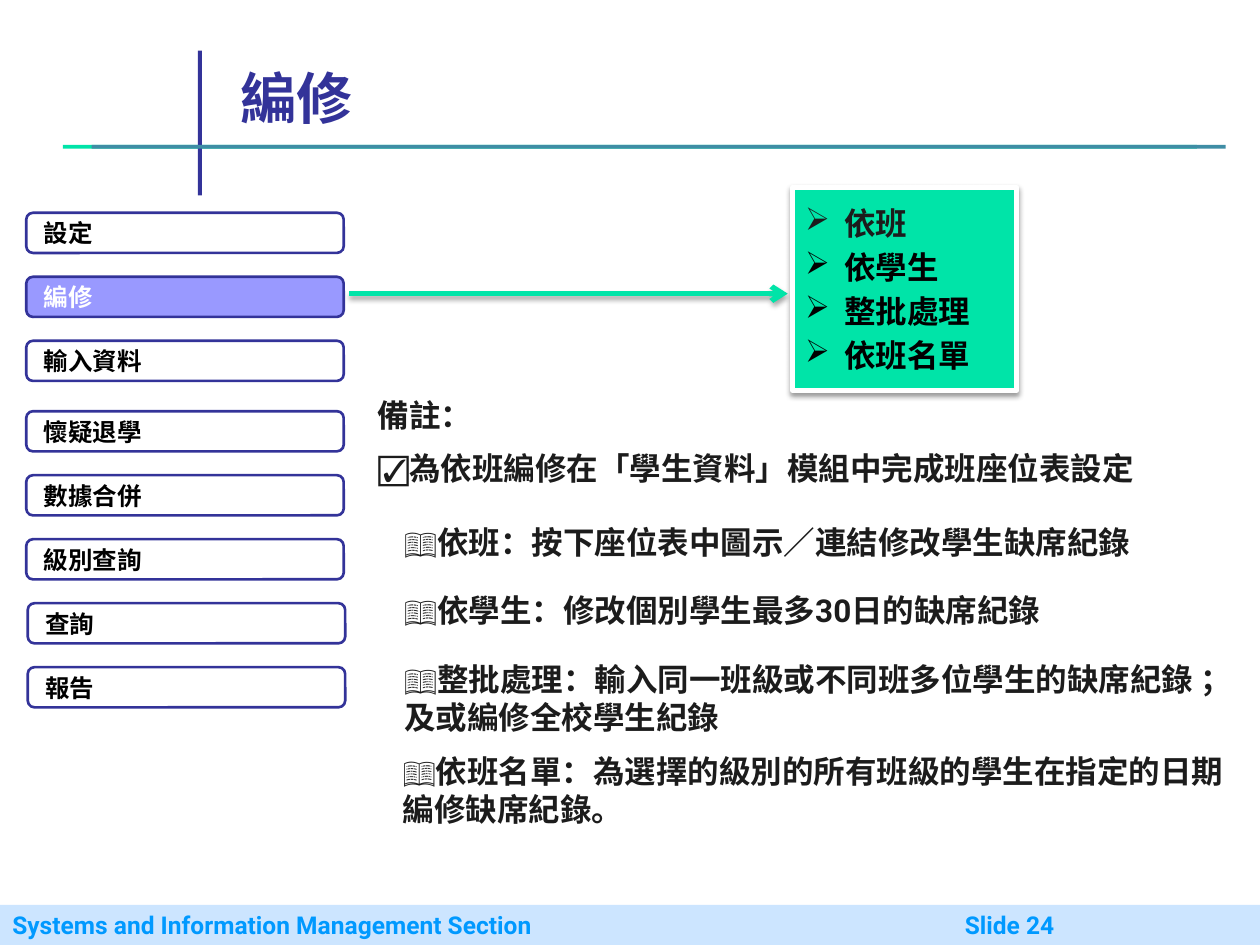
from lxml import etree
from pptx import Presentation
from pptx.dml.color import RGBColor
from pptx.enum.shapes import MSO_CONNECTOR, MSO_SHAPE
from pptx.enum.text import MSO_ANCHOR, MSO_AUTO_SIZE, PP_ALIGN
from pptx.oxml.ns import qn
from pptx.util import Cm, Pt

RECT, ROUNDED = MSO_SHAPE.RECTANGLE, MSO_SHAPE.ROUNDED_RECTANGLE
STRAIGHT = MSO_CONNECTOR.STRAIGHT
TOP, MIDDLE, BOTTOM = MSO_ANCHOR.TOP, MSO_ANCHOR.MIDDLE, MSO_ANCHOR.BOTTOM
LEFT = PP_ALIGN.LEFT
NO_AUTOFIT = MSO_AUTO_SIZE.NONE

COLORS = {
    "navy": "333399", "mint": "00E4A8", "teal": "3F8DA5", "lilac": "9999FF",
    "footer": "CCE5FF", "footer_text": "0099FF", "ink": "1C1C1C",
    "black": "000000", "white": "FFFFFF",
}
CJK, LATIN, TITLE_FONT = "Noto Sans CJK TC", "Roboto", "Arial"

MENU = ["設定", "編修", "輸入資料", "懷疑退學", "數據合併", "級別查詢", "查詢", "報告"]
CURRENT = "編修"
MODES = ["依班", "依學生", "整批處理", "依班名單"]
# left, top, height in cm, then the paragraphs
NOTES = [
    (7.37, 7.85, 2.18, ["備註：", "☑為依班編修在「學生資料」模組中完成班座位表設定"]),
    (7.9, 10.41, 1.02, ["📖依班：按下座位表中圖示／連結修改學生缺席紀錄"]),
    (7.9, 11.79, 1.02, ["📖依學生：修改個別學生最多30日的缺席紀錄"]),
    (7.9, 13.18, 1.8,
     ["📖整批處理：輸入同一班級或不同班多位學生的缺席紀錄 ；及或編修全校學生紀錄"]),
    (7.87, 15.04, 1.8,
     ["📖依班名單：為選擇的級別的所有班級的學生在指定的日期編修缺席紀錄。"]),
]


def rgb(name):
    return RGBColor.from_string(COLORS[name])


def write(frame, lines, size, color, gap=0, anchor=TOP, wrap=True, latin=LATIN):
    """Fill a frame with bold left-aligned paragraphs, gap points apart."""
    frame.text = "\n".join(lines)
    frame.word_wrap = wrap
    frame.vertical_anchor = anchor
    for index, paragraph in enumerate(frame.paragraphs):
        paragraph.alignment = LEFT
        paragraph.space_before = Pt(gap if index else 0)
        for run in paragraph.runs:
            run.font.size = Pt(size)
            run.font.bold = True
            run.font.color.rgb = rgb(color)
            run.font.name = latin
            east_asian = etree.SubElement(run.font._element, qn("a:ea"))
            east_asian.set("typeface", CJK)


def add_block(slide, kind, left, top, width, height, fill=None, line=None, weight=1.5):
    block = slide.shapes.add_shape(kind, Cm(left), Cm(top), Cm(width), Cm(height))
    block.shadow.inherit = False
    if fill:
        block.fill.solid()
        block.fill.fore_color.rgb = rgb(fill)
    else:
        block.fill.background()
    if line:
        block.line.color.rgb = rgb(line)
        block.line.width = Pt(weight)
    else:
        block.line.fill.background()
    return block


def add_text(slide, left, top, width, height, lines, size, color, **style):
    box = slide.shapes.add_textbox(Cm(left), Cm(top), Cm(width), Cm(height))
    write(box.text_frame, lines, size, color, **style)


def add_drop_shadow(properties, distance, opacity):
    """Put a soft downward shadow in a shape's properties."""
    effects = properties.find(qn("a:effectLst"))
    if effects is None:
        effects = etree.SubElement(properties, qn("a:effectLst"))
    shadow = etree.SubElement(
        effects, qn("a:outerShdw"), blurRad=str(Pt(3.1)), dist=str(Pt(distance)),
        dir="5400000", rotWithShape="0")
    color = etree.SubElement(shadow, qn("a:srgbClr"), val=COLORS["black"])
    etree.SubElement(color, qn("a:alpha"), val=str(opacity * 1000))


def add_heading(slide):
    add_block(slide, RECT, 1.27, 2.92, 22.86, 0.08, "mint")
    add_block(slide, RECT, 3.99, 1.02, 0.08, 2.92, "navy")
    add_block(slide, RECT, 1.85, 2.92, 22.86, 0.08, "teal")
    title = slide.shapes.title
    title.left, title.top, title.width, title.height = Cm(4.6), Cm(1.27), Cm(2.82), Cm(1.5)
    write(title.text_frame, ["編修"], 32, "navy", anchor=BOTTOM, wrap=False,
          latin=TITLE_FONT)
    title.text_frame.auto_size = NO_AUTOFIT


def add_footer(slide):
    top, height = 18.24, 0.81
    bar = add_block(slide, RECT, 0, top, 25.4, height, "footer")
    write(bar.text_frame, ["Systems and Information Management Section"], 14,
          "footer_text", anchor=MIDDLE)
    add_text(slide, 19.2, top, 4, height, ["Slide 24"], 14, "footer_text", anchor=MIDDLE)


def add_menu(slide):
    pitch, extra_gap = 1.29, 0.13
    for row, label in enumerate(MENU):
        current = label == CURRENT
        left = 0.53 if row < 6 else 0.56
        top = 4.29 + row * pitch + (extra_gap if row >= 3 else 0)
        button = add_block(slide, ROUNDED, left, top, 6.4, 0.81,
                           "lilac" if current else None, "navy")
        button.text_frame.margin_left = Cm(0.31)
        write(button.text_frame, [label], 14, "white" if current else "black",
              anchor=MIDDLE)


def add_arrow(slide):
    arrow = slide.shapes.add_connector(STRAIGHT, Cm(7.04), Cm(5.92), Cm(15.88), Cm(5.92))
    arrow.line.color.rgb = rgb("mint")
    arrow.line.width = Pt(3)
    etree.SubElement(arrow.line._get_or_add_ln(), qn("a:tailEnd"), type="arrow")
    add_drop_shadow(arrow._element.spPr, 1.8, 35)


def add_modes(slide):
    panel = add_block(slide, RECT, 15.98, 3.78, 4.52, 4.09, "mint", "white", 3)
    add_drop_shadow(panel._element.spPr, 1.6, 38)
    write(panel.text_frame, MODES, 18, "black", gap=3.6, anchor=MIDDLE, wrap=False)
    paragraphs = panel.text_frame.paragraphs
    paragraphs[0].runs[0].font.color.rgb = rgb("ink")
    indent = Cm(0.79)
    for paragraph in paragraphs:
        properties = paragraph._p.get_or_add_pPr()
        properties.set("marL", str(indent))
        properties.set("indent", str(-indent))
        etree.SubElement(properties, qn("a:buChar"), char="➢")


def main():
    deck = Presentation()
    deck.slide_width, deck.slide_height = Cm(25.4), Cm(19.05)
    slide = deck.slides.add_slide(deck.slide_layouts[5])
    add_heading(slide)
    add_footer(slide)
    add_arrow(slide)
    add_modes(slide)
    add_menu(slide)
    for left, top, height, lines in NOTES:
        add_text(slide, left, top, 17.5, height, lines, 18, "ink", gap=9)
    deck.save("out.pptx")


if __name__ == "__main__":
    main()
